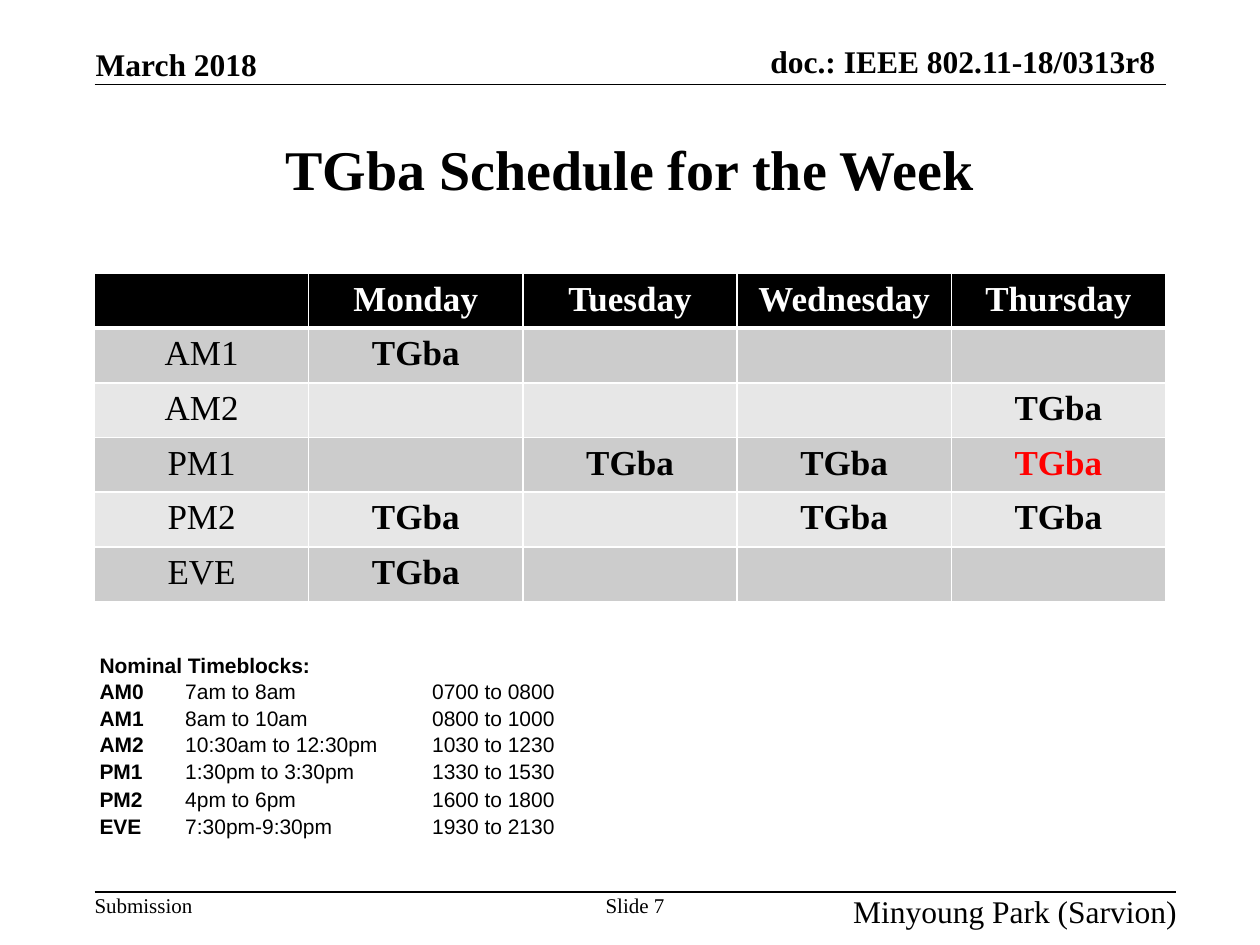
"""Build the weekly TGba schedule slide."""
from typing import NamedTuple

from lxml import etree
from pptx import Presentation
from pptx import util as u
from pptx.dml.color import RGBColor
from pptx.enum import shapes, text
from pptx.oxml.ns import qn

SERIF, SANS = "Times New Roman", "Arial"
BLACK, WHITE, RED = "000000", "FFFFFF", "FF0000"
BANDS = ("CCCCCC", "E7E7E7")
LEFT, CENTER, RIGHT = text.PP_ALIGN.LEFT, text.PP_ALIGN.CENTER, text.PP_ALIGN.RIGHT
TOP, MIDDLE, BOTTOM = text.MSO_ANCHOR.TOP, text.MSO_ANCHOR.MIDDLE, text.MSO_ANCHOR.BOTTOM
PLAIN_TABLE = "{2D5ABB26-0587-4C30-8999-92F81FD0307C}"


class Label(NamedTuple):
    words: str
    left: float
    top: float
    width: float
    height: float
    size: float
    bold: bool = False
    align: text.PP_ALIGN = LEFT
    anchor: text.MSO_ANCHOR = TOP
    wrap: bool = False
    fit: bool = True


class Rule(NamedTuple):
    left: float
    right: float
    top: float


class Block(NamedTuple):
    name: str
    hours: str
    clock: str
    height: float
    hours_span: int = 1


LABELS = (
    Label("doc.: IEEE 802.11-18/0313r8", 401.76, 23.76, 258.48, 21.6, 18, True, RIGHT, BOTTOM),
    Label("Submission", 54, 509.76, 56.16, 14.4, 12),
    Label("TGba Schedule for the Week", 54, 54, 612, 84.24, 32, True, CENTER, MIDDLE, True, False),
    Label("March 2018", 54.72, 25.92, 105.84, 21.6, 18, True, LEFT, BOTTOM),
    Label("Minyoung Park (Sarvion)", 455.76, 509.76, 216.72, 14.4, 18, align=RIGHT, wrap=True),
    Label("Slide 7", 342, 509.76, 41.76, 14.4, 12, align=CENTER),
)
RULES = (Rule(54, 666, 48.24), Rule(54, 672, 509.76))
DAYS = ("Monday", "Tuesday", "Wednesday", "Thursday")
SESSIONS = {
    "AM1": ("Monday",),
    "AM2": ("Thursday",),
    "PM1": ("Tuesday", "Wednesday", "Thursday"),
    "PM2": ("Monday", "Wednesday", "Thursday"),
    "EVE": ("Monday",),
}
HIGHLIGHT = ("PM1", "Thursday")
BLOCKS = (
    Block("AM0", "7am to 8am", "0700 to 0800", 14.8),
    Block("AM1", "8am to 10am", "0800 to 1000", 13),
    Block("AM2", "10:30am to 12:30pm", "1030 to 1230", 13, 2),
    Block("PM1", "1:30pm to 3:30pm", "1330 to 1530", 13, 2),
    Block("PM2", "4pm to 6pm", "1600 to 1800", 15.8),
    Block("EVE", "7:30pm-9:30pm", "1930 to 2130", 15.8, 2),
)


def color(value: str) -> RGBColor:
    """Turn a hex string into a colour."""
    return RGBColor.from_string(value)


def write(para, words: str, face: str, size: float, ink: str, bold: bool, align) -> None:
    """Fill a paragraph with one style of text."""
    para.alignment = align
    font = para.font
    font.name, font.size, font.bold = face, u.Pt(size), bold
    font.color.rgb = color(ink)
    if words:
        para.add_run().text = words
    else:
        etree.SubElement(para._p, qn("a:endParaRPr"), sz=str(int(size * 100)))


def add_label(page, label: Label) -> None:
    """Add a line of text to the page."""
    box = page.shapes.add_textbox(*map(u.Pt, label[1:5]))
    frame = box.text_frame
    if label.fit:
        frame.margin_left = frame.margin_right = frame.margin_top = frame.margin_bottom = 0
        frame.auto_size = text.MSO_AUTO_SIZE.SHAPE_TO_FIT_TEXT
    frame.word_wrap = label.wrap
    frame.vertical_anchor = label.anchor
    write(frame.paragraphs[0], label.words, SERIF, label.size, BLACK, label.bold, label.align)


def add_rule(page, rule: Rule) -> None:
    """Add a horizontal line to the page."""
    line = page.shapes.add_connector(
        shapes.MSO_CONNECTOR.STRAIGHT,
        u.Pt(rule.left), u.Pt(rule.top), u.Pt(rule.right), u.Pt(rule.top),
    )
    line.line.color.rgb = color(BLACK)
    line.line.width = u.Pt(1)
    etree.SubElement(line._element.spPr, qn("a:effectLst"))


def add_grid(page, left: float, top: float, widths: list[float], heights: list[float]):
    """Add an unstyled table with the given columns and rows."""
    frame = page.shapes.add_table(
        len(heights), len(widths), u.Pt(left), u.Pt(top), u.Pt(sum(widths)), u.Pt(sum(heights))
    )
    table = frame.table
    table.first_row = table.horz_banding = False
    table._tbl.tblPr.find(qn("a:tableStyleId")).text = PLAIN_TABLE
    for column, width in zip(table.columns, widths):
        column.width = u.Pt(width)
    for row, height in zip(table.rows, heights):
        row.height = u.Pt(height)
    return table


def set_borders(cell, ink: str, widths: dict[str, float]) -> None:
    """Draw the cell borders ahead of its fill."""
    properties = cell._tc.get_or_add_tcPr()
    for place, (side, width) in enumerate(widths.items()):
        border = etree.Element(qn(f"a:ln{side}"), w=str(u.Pt(width)))
        fill = etree.SubElement(border, qn("a:solidFill"))
        etree.SubElement(fill, qn("a:srgbClr"), val=ink)
        properties.insert(place, border)


def add_schedule(page) -> None:
    """Add the table of sessions by day."""
    rows = [("", *DAYS)]
    for slot, busy in SESSIONS.items():
        rows.append((slot, *("TGba" if day in busy else "" for day in DAYS)))
    table = add_grid(page, 54, 156.24, [122.4] * len(rows[0]), [31.2] * len(rows))
    for r, words in enumerate(rows):
        for c, word in enumerate(words):
            cell = table.cell(r, c)
            cell.fill.solid()
            cell.fill.fore_color.rgb = color(BANDS[(r - 1) % 2] if r else BLACK)
            edges = {"L": 1, "R": 1, "T": 3 if r == 1 else 1, "B": 1 if r else 3}
            set_borders(cell, WHITE, edges)
            ink = BLACK if r else WHITE
            if (words[0], rows[0][c]) == HIGHLIGHT:
                ink = RED
            write(cell.text_frame.paragraphs[0], word, SERIF, 20, ink, r == 0 or c > 0, CENTER)


def add_timeblocks(page) -> None:
    """Add the table of nominal timeblocks."""
    heights = [13, *(block.height for block in BLOCKS)]
    table = add_grid(page, 56.16, 372.24, [49, 94.3, 46.8, 47.5, 47.5], heights)
    rows = [("Nominal Timeblocks:", "", "", "", "")]
    rows += [(block.name, block.hours, "", block.clock, "") for block in BLOCKS]
    for r, words in enumerate(rows):
        for c, word in enumerate(words):
            cell = table.cell(r, c)
            cell.fill.background()
            cell.margin_left = cell.margin_right = cell.margin_top = u.Pt(0.72)
            cell.margin_bottom = 0
            cell.vertical_anchor = BOTTOM
            write(cell.text_frame.paragraphs[0], word, SANS, 12, BLACK, c == 0, LEFT)
    table.cell(0, 0).merge(table.cell(0, 2))
    for r, block in enumerate(BLOCKS, 1):
        if block.hours_span > 1:
            table.cell(r, 1).merge(table.cell(r, block.hours_span))
        table.cell(r, 3).merge(table.cell(r, 4))


def main() -> None:
    """Build and save the deck."""
    deck = Presentation()
    deck.slide_width, deck.slide_height = u.Pt(720), u.Pt(540)
    page = deck.slides.add_slide(deck.slide_layouts[6])
    for rule in RULES:
        add_rule(page, rule)
    for label in LABELS:
        add_label(page, label)
    add_schedule(page)
    add_timeblocks(page)
    deck.save("out.pptx")


if __name__ == "__main__":
    main()
